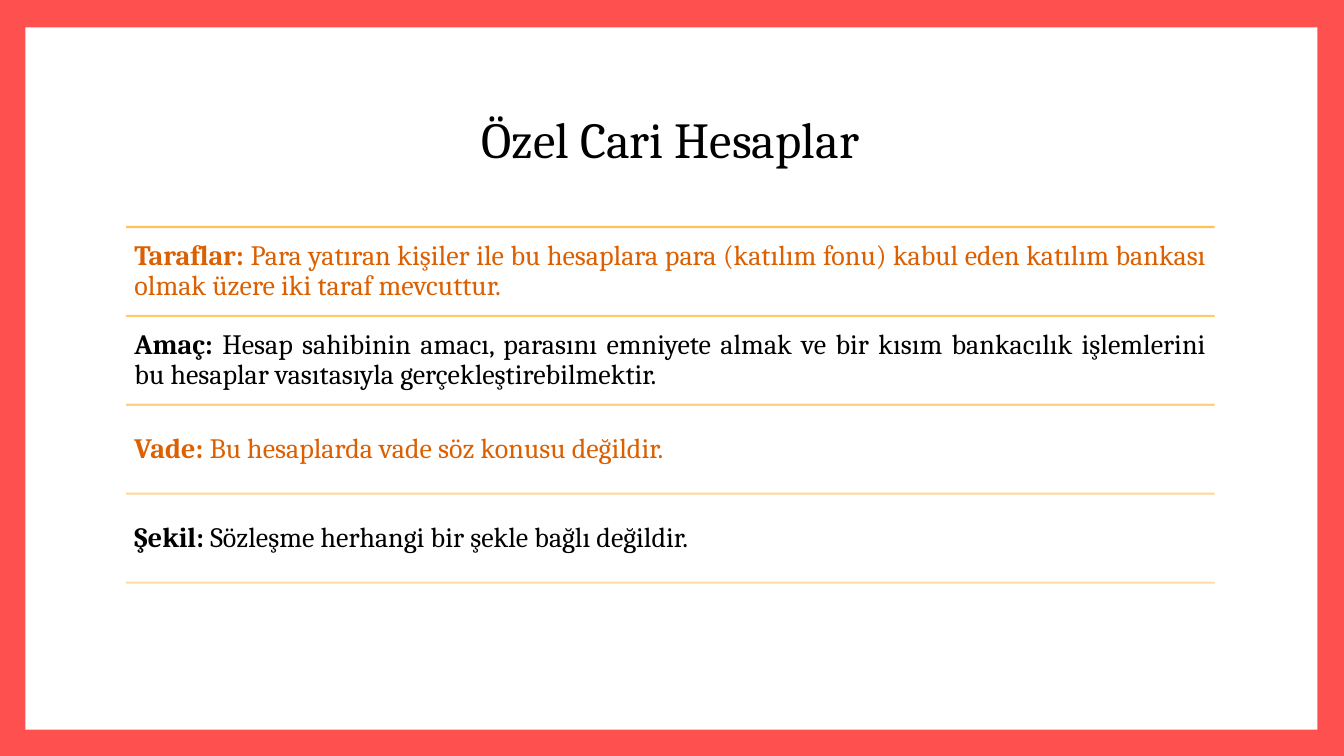
from lxml import etree
from pptx import Presentation
from pptx.dml.color import RGBColor
from pptx.enum import shapes, text
from pptx.oxml.ns import qn
from pptx.util import Cm, Pt

RED = RGBColor(0xFF, 0x50, 0x50)
WHITE = RGBColor(0xFF, 0xFF, 0xFF)
BLACK = RGBColor(0, 0, 0)
ORANGE = RGBColor(0xDC, 0x5F, 0x00)
AMBER = RGBColor(0xFF, 0xBD, 0x47)

LEFT, WIDTH = 3.18, 27.43
ROWS_TOP, ROW_HEIGHT = 5.72, 2.24

ROWS = [
    ("Taraflar: ", "Para yatıran kişiler ile bu hesaplara para (katılım fonu) kabul eden "
     "katılım bankası olmak üzere iki taraf mevcuttur."),
    ("Amaç: ", "Hesap sahibinin amacı, parasını emniyete almak ve bir kısım bankacılık "
     "işlemlerini bu hesaplar vasıtasıyla gerçekleştirebilmektir."),
    ("Vade:", " Bu hesaplarda vade söz konusu değildir."),
    ("Şekil: ", "Sözleşme herhangi bir şekle bağlı değildir."),
]


class SlideBuilder:
    font = "Cambria"

    def __init__(self, slide):
        self.s = slide

    def background(self, color):
        fill = self.s.background.fill
        fill.solid()
        fill.fore_color.rgb = color

    def panel(self, left, top, width, height, color):
        sp = self.s.shapes.add_shape(shapes.MSO_SHAPE.RECTANGLE,
                                     Cm(left), Cm(top), Cm(width), Cm(height))
        sp.shadow.inherit = False
        sp.fill.solid()
        sp.fill.fore_color.rgb = color
        sp.line.fill.background()

    def textbox(self, top, height, runs, size, color, align):
        """Add a one-paragraph box; runs are (text, bold) pairs."""
        sp = self.s.shapes.add_textbox(Cm(LEFT), Cm(top), Cm(WIDTH), Cm(height))
        tf = sp.text_frame
        tf.word_wrap = True
        tf.vertical_anchor = text.MSO_ANCHOR.MIDDLE
        tf.margin_left = tf.margin_right = tf.margin_top = tf.margin_bottom = Cm(0.21)
        p = tf.paragraphs[0]
        p.alignment = align
        p.line_spacing = 0.9
        for words, bold in runs:
            r = p.add_run()
            r.text = words
            r.font.name = self.font
            r.font.size = Pt(size)
            r.font.bold = bold
            r.font.color.rgb = color

    def rule(self, top, opacity):
        """Draw a horizontal line with the given opacity in percent."""
        line = self.s.shapes.add_connector(shapes.MSO_CONNECTOR.STRAIGHT, Cm(LEFT), Cm(top),
                                           Cm(LEFT + WIDTH), Cm(top))
        line.line.width = Pt(1.5)
        line.line.color.rgb = AMBER
        spPr = line._element.spPr
        color = next(spPr.iter(qn("a:srgbClr")))
        etree.SubElement(color, qn("a:alpha")).set("val", str(opacity * 1000))
        etree.SubElement(spPr, qn("a:effectLst"))


def main():
    prs = Presentation()
    prs.slide_width, prs.slide_height = Cm(33.87), Cm(19.05)
    b = SlideBuilder(prs.slides.add_slide(prs.slide_layouts[6]))

    b.background(RED)
    b.panel(0.64, 0.69, 32.56, 17.7, WHITE)
    b.textbox(1.7, 3.76, [("Özel Cari Hesaplar", False)], 36, BLACK, text.PP_ALIGN.CENTER)

    for i, (label, body) in enumerate(ROWS):
        top = ROWS_TOP + i * ROW_HEIGHT
        b.rule(top, 90 - 10 * i)
        b.textbox(top, ROW_HEIGHT, [(label, True), (body, False)], 20,
                  BLACK if i % 2 else ORANGE, text.PP_ALIGN.JUSTIFY)
    b.rule(ROWS_TOP + len(ROWS) * ROW_HEIGHT, 90 - 10 * len(ROWS))

    prs.save("out.pptx")


if __name__ == "__main__":
    main()
